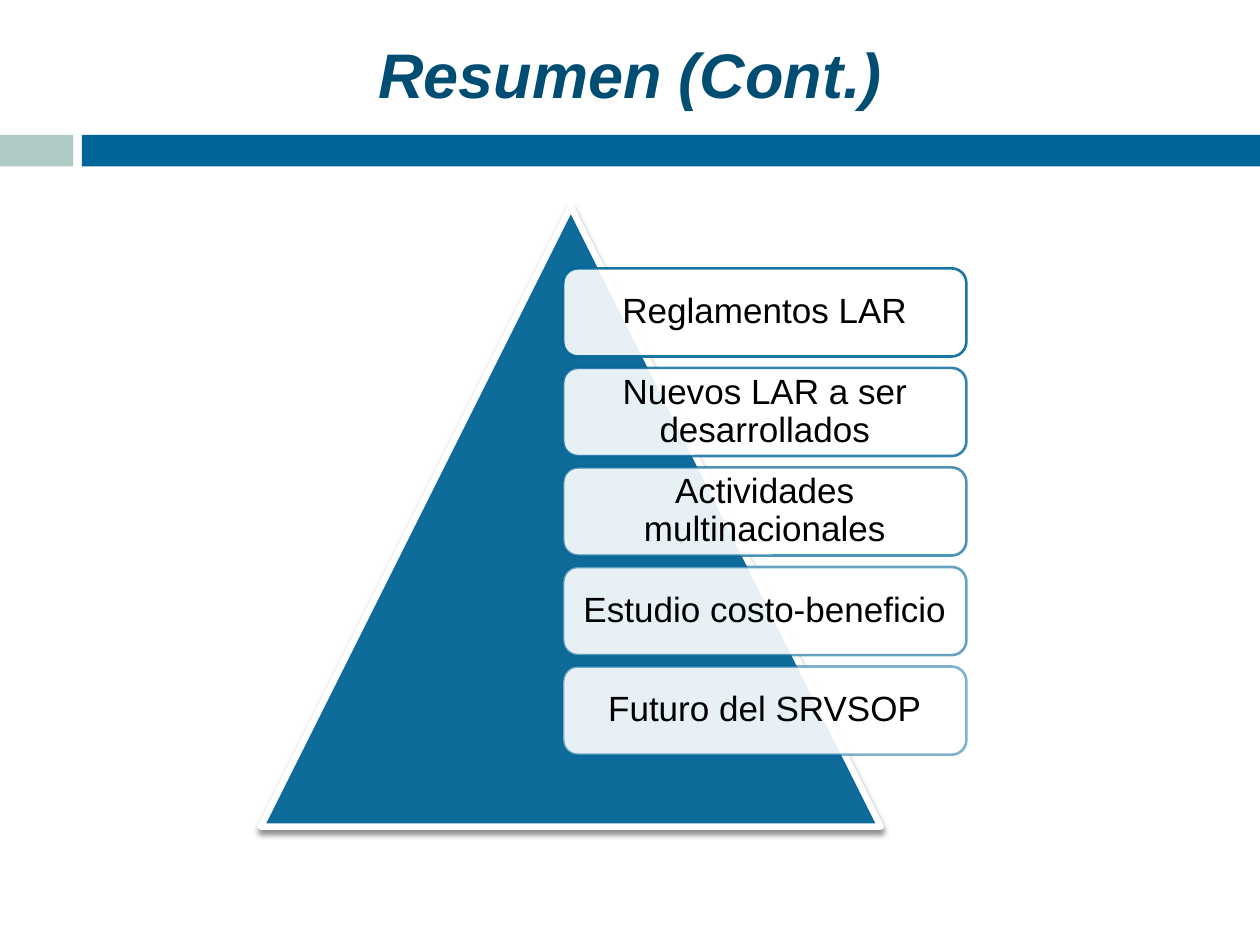
from dataclasses import dataclass

from lxml.etree import SubElement
from pptx import Presentation
from pptx.dml.color import RGBColor
from pptx.enum.shapes import MSO_SHAPE
from pptx.enum.text import MSO_ANCHOR, PP_ALIGN
from pptx.oxml.ns import qn
from pptx.util import Inches, Pt

FONT = "Arial"
BLUE, SAGE, NAVY, WHITE, BLACK = "006699", "AFCAC4", "004D73", "FFFFFF", "000000"


@dataclass
class Box:
    left: float
    top: float
    width: float
    height: float

    def emu(self) -> list:
        return [Inches(v) for v in (self.left, self.top, self.width, self.height)]


def rgb(color: str) -> RGBColor:
    return RGBColor.from_string(color)


def paint(fill, color: str, opacity: int = 100) -> None:
    """Apply a solid fill with an opacity in percent."""
    fill.solid()
    fill.fore_color.rgb = rgb(color)
    if opacity < 100:
        clr = fill._xPr.find(qn("a:solidFill"))[0]
        SubElement(clr, qn("a:alpha"), val=str(opacity * 1000))


def add_shape(s, kind, box: Box, color: str, opacity: int = 100):
    sp = s.shapes.add_shape(kind, *box.emu())
    sp.shadow.inherit = False
    paint(sp.fill, color, opacity)
    sp.line.fill.background()
    return sp


def outline(sp, color: str, width: float, opacity: int = 100) -> None:
    sp.line.width = Pt(width)
    paint(sp.line.fill, color, opacity)


def drop_shadow(sp, opacity: int, blur: float, distance: float) -> None:
    effects = sp._element.spPr.find(qn("a:effectLst"))
    shadow = SubElement(effects, qn("a:outerShdw"), blurRad=str(Pt(blur)),
                        dist=str(Pt(distance)), dir="5400000", rotWithShape="0")
    clr = SubElement(shadow, qn("a:srgbClr"), val=BLACK)
    SubElement(clr, qn("a:alpha"), val=str(opacity * 1000))


def set_text(sp, text: str, size: int, color: str, inset: float):
    """Write one centred paragraph and return it."""
    tf = sp.text_frame
    tf.text = text
    tf.word_wrap = True
    tf.vertical_anchor = MSO_ANCHOR.MIDDLE
    tf.margin_left = tf.margin_right = Inches(inset)
    tf.margin_top = tf.margin_bottom = Inches(0.05)
    p = tf.paragraphs[0]
    p.alignment = PP_ALIGN.CENTER
    font = p.runs[0].font
    font.name, font.size, font.color.rgb = FONT, Pt(size), rgb(color)
    return p


def add_topic(s, index: int, text: str) -> None:
    box = Box(4.47, 2.13 + 0.79 * index, 3.2, 0.7)
    sp = add_shape(s, MSO_SHAPE.ROUNDED_RECTANGLE, box, WHITE, 90)
    outline(sp, BLUE, 1.5, 90 - 10 * index)
    p = set_text(sp, text, 20, BLACK, 0.05)
    p.line_spacing = 0.9


TOPICS = [
    "Reglamentos LAR",
    "Nuevos LAR a ser desarrollados",
    "Actividades multinacionales",
    "Estudio costo-beneficio",
    "Futuro del SRVSOP",
]


def main() -> None:
    prs = Presentation()
    prs.slide_width, prs.slide_height = Inches(10), Inches(7.5)
    s = prs.slides.add_slide(prs.slide_layouts[6])

    # Header band
    add_shape(s, MSO_SHAPE.RECTANGLE, Box(0, 1.07, 0.58, 0.25), SAGE)
    add_shape(s, MSO_SHAPE.RECTANGLE, Box(0.65, 1.07, 9.35, 0.25), BLUE)

    # Title
    title = s.shapes.add_textbox(*Box(0.54, 0.25, 8.92, 0.67).emu())
    p = set_text(title, "Resumen (Cont.)", 36, NAVY, 0.1)
    p.runs[0].font.bold = p.runs[0].font.italic = True

    # Pyramid
    pyramid = add_shape(s, MSO_SHAPE.ISOSCELES_TRIANGLE,
                        Box(2.07, 1.64, 4.92, 4.92), BLUE, 90)
    outline(pyramid, WHITE, 3.75)
    drop_shadow(pyramid, 45, 3, 2.4)

    # Topics, with outlines fading downwards
    for index, text in enumerate(TOPICS):
        add_topic(s, index, text)

    prs.save("out.pptx")


if __name__ == "__main__":
    main()
